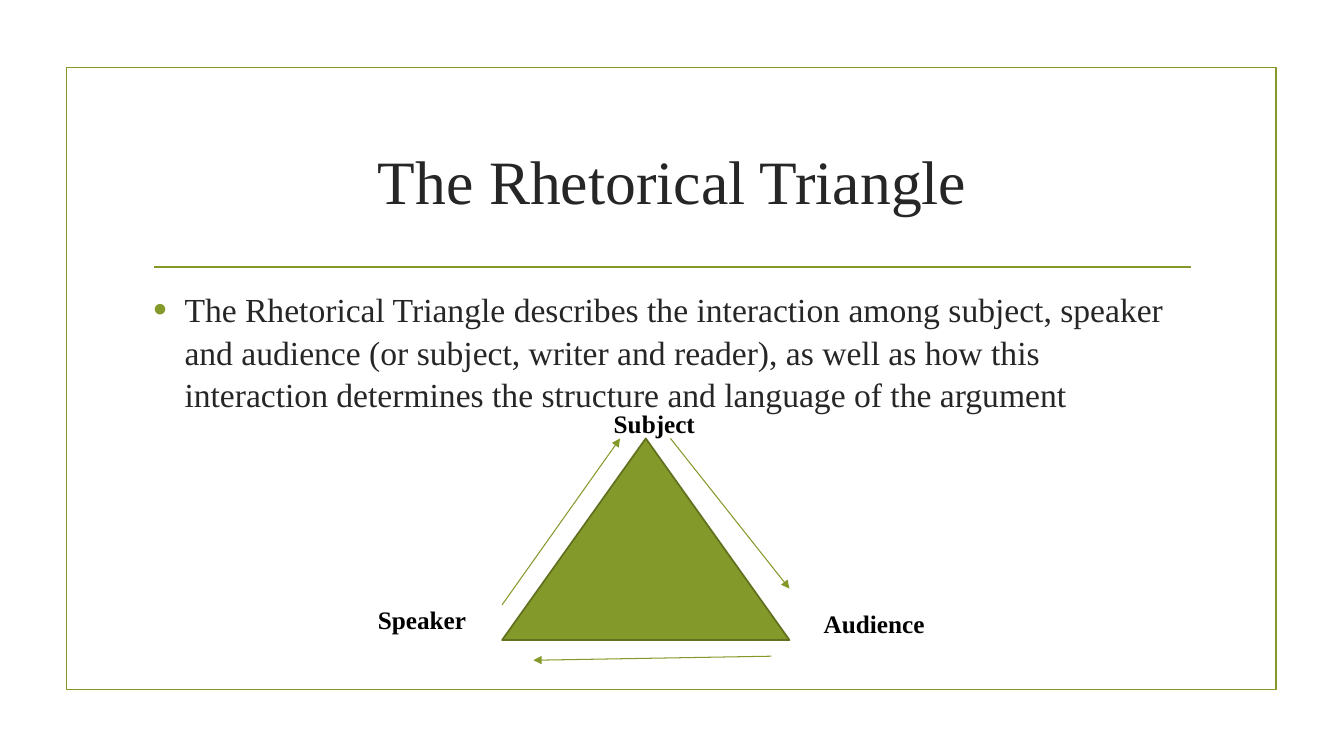
from typing import NamedTuple

import pptx
import pptx.dml.color
import pptx.enum.shapes
import pptx.enum.text
import pptx.oxml
import pptx.oxml.ns
import pptx.util
from pptx.util import Inches

GREEN = pptx.dml.color.RGBColor(0x83, 0x99, 0x2A)
DARK_GREEN = pptx.dml.color.RGBColor(0x61, 0x71, 0x1F)
DARK_GREY = pptx.dml.color.RGBColor(0x26, 0x26, 0x26)
BLACK = pptx.dml.color.RGBColor(0, 0, 0)
FONT_NAME = "Times New Roman"

Align = pptx.enum.text.PP_ALIGN
ShapeKind = pptx.enum.shapes.MSO_SHAPE


class Arrow(NamedTuple):
    start: tuple[float, float]
    end: tuple[float, float]


class Label(NamedTuple):
    text: str
    left: float
    top: float
    width: float


ARROWS = [
    Arrow((6.65, 4.35), (7.83, 5.84)),
    Arrow((7.65, 6.51), (5.29, 6.55)),
    Arrow((4.98, 6), (6.15, 4.35)),
]
LABELS = [
    Label("Subject", 5.77, 4, 1.44),
    Label("Audience", 8, 5.99, 1.34),
    Label("Speaker", 3.55, 5.95, 1.27),
]


def drawing_element(tag: str, attributes: str = ""):
    return pptx.oxml.parse_xml(f"<a:{tag} {pptx.oxml.ns.nsdecls('a')} {attributes}/>")


def place(shape, left: float, top: float, width: float, height: float) -> None:
    shape.left, shape.top = Inches(left), Inches(top)
    shape.width, shape.height = Inches(width), Inches(height)


def format_font(paragraph, size: int, color, bold: bool = False) -> None:
    for run in paragraph.runs:
        run.font.name = FONT_NAME
        run.font.size = pptx.util.Pt(size)
        run.font.color.rgb = color
        run.font.bold = bold


def add_outlined_shape(slide, kind, left: float, top: float, width: float, height: float, line_color):
    shape = slide.shapes.add_shape(kind, Inches(left), Inches(top), Inches(width), Inches(height))
    shape.shadow.inherit = False
    shape.fill.background()
    shape.line.color.rgb = line_color
    shape.line.width = pptx.util.Pt(1.25)
    return shape


def add_line(slide, start: tuple[float, float], end: tuple[float, float], width: float):
    points = [Inches(value) for value in (*start, *end)]
    connector = slide.shapes.add_connector(pptx.enum.shapes.MSO_CONNECTOR.STRAIGHT, *points)
    connector.line.color.rgb = GREEN
    connector.line.width = pptx.util.Pt(width)
    connector._element.spPr.append(drawing_element("effectLst"))
    return connector


def add_arrow(slide, arrow: Arrow) -> None:
    connector = add_line(slide, arrow.start, arrow.end, 0.75)
    connector.line._get_or_add_ln().append(drawing_element("tailEnd", 'type="triangle"'))


def add_label(slide, label: Label) -> None:
    box = slide.shapes.add_textbox(
        Inches(label.left), Inches(label.top), Inches(label.width), Inches(0.4))
    box.text_frame.word_wrap = True
    box.text_frame.text = label.text
    paragraph = box.text_frame.paragraphs[0]
    paragraph.alignment = Align.CENTER
    format_font(paragraph, 18, BLACK, bold=True)


def fill_title(title) -> None:
    place(title, 1.42, 1.07, 10.5, 1.43)
    title.text_frame.text = "The Rhetorical Triangle"
    title.text_frame.auto_size = pptx.enum.text.MSO_AUTO_SIZE.NONE
    title.text_frame.vertical_anchor = pptx.enum.text.MSO_ANCHOR.MIDDLE
    paragraph = title.text_frame.paragraphs[0]
    paragraph.alignment = Align.CENTER
    format_font(paragraph, 44, DARK_GREY)


def fill_body(body) -> None:
    place(body, 1.42, 2.8, 10.5, 3.63)
    body.text_frame.text = (
        "The Rhetorical Triangle describes the interaction among subject, speaker and audience "
        "(or subject, writer and reader), as well as how this interaction determines the "
        "structure and language of the argument")
    body.text_frame.auto_size = pptx.enum.text.MSO_AUTO_SIZE.NONE
    paragraph = body.text_frame.paragraphs[0]
    paragraph.line_spacing = 1.05
    paragraph.space_before = pptx.util.Pt(0)
    paragraph.space_after = pptx.util.Pt(6)
    properties = paragraph._p.get_or_add_pPr()
    properties.set("marL", str(Inches(0.31)))
    properties.set("indent", str(-Inches(0.31)))
    bullet_color = drawing_element("buClr")
    bullet_color.append(drawing_element("srgbClr", f'val="{GREEN}"'))
    properties.append(bullet_color)
    properties.append(drawing_element("buSzPct", 'val="115000"'))
    properties.append(drawing_element("buFont", 'typeface="Arial"'))
    properties.append(drawing_element("buChar", 'char="•"'))
    format_font(paragraph, 24, DARK_GREY)


def main() -> None:
    presentation = pptx.Presentation()
    presentation.slide_width = Inches(13.33)
    presentation.slide_height = Inches(7.5)
    slide = presentation.slides.add_slide(presentation.slide_layouts[1])

    fill_title(slide.shapes.title)
    fill_body(slide.placeholders[1])
    add_outlined_shape(slide, ShapeKind.RECTANGLE, 0.66, 0.67, 12, 6.17, GREEN)
    add_line(slide, (1.53, 2.65), (11.81, 2.65), 1.25)

    triangle = add_outlined_shape(
        slide, ShapeKind.ISOSCELES_TRIANGLE, 4.98, 4.35, 2.85, 2, DARK_GREEN)
    triangle.fill.solid()
    triangle.fill.fore_color.rgb = GREEN
    for arrow in ARROWS:
        add_arrow(slide, arrow)
    for label in LABELS:
        add_label(slide, label)

    presentation.save("out.pptx")


if __name__ == "__main__":
    main()
